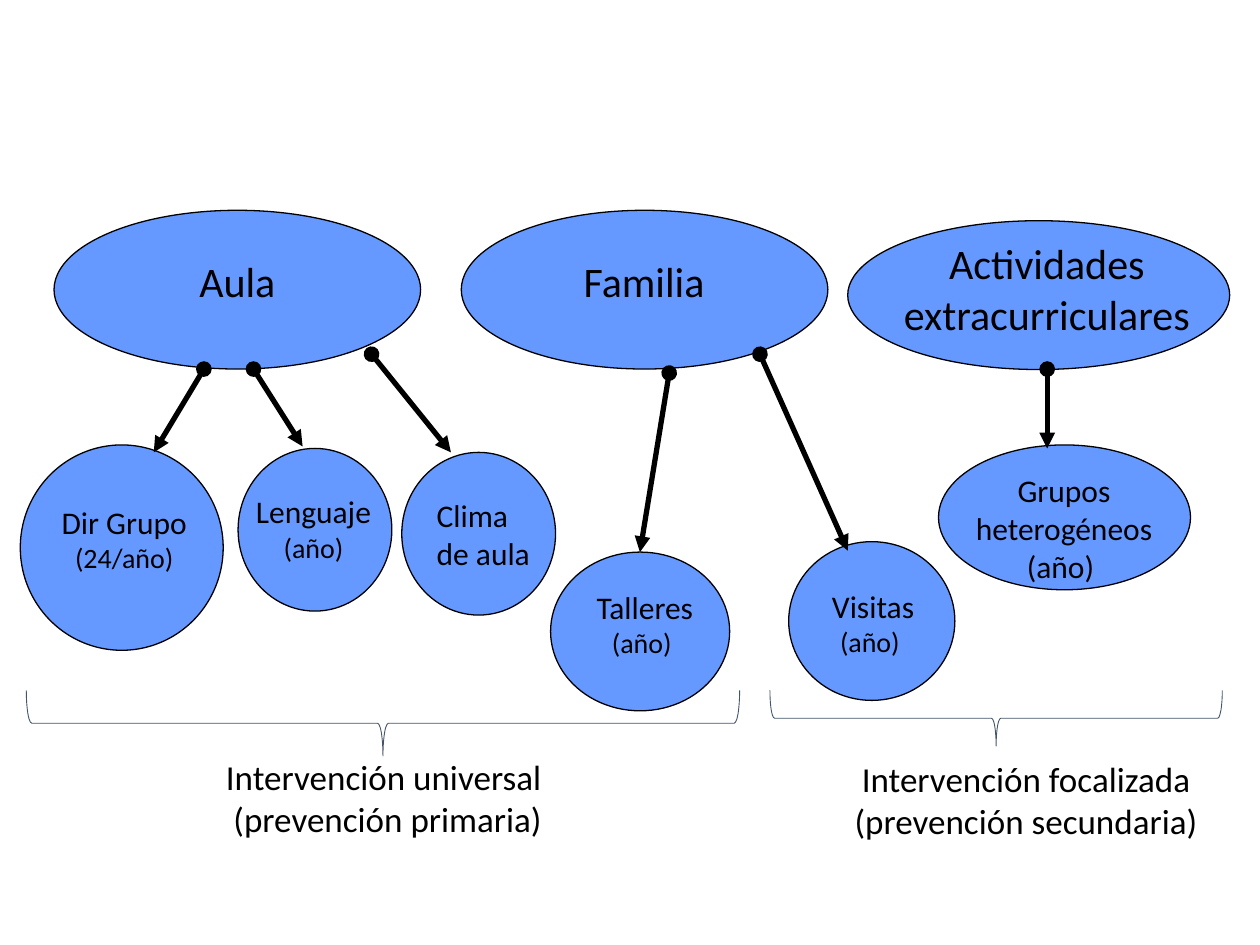
from lxml import etree
from pptx import Presentation
from pptx import util as u
from pptx.dml.color import RGBColor
from pptx.enum import shapes, text
from pptx.oxml.ns import qn

HUES = {"blue": "6699FF", "ink": "000000", "slate": "44546A"}
FONT = "Calibri"

# left, top, width, height in cm
OVALS = [
    (17.09, 4.45, 7.7, 3),         # extracurricular activities
    (9.3, 4.24, 7.39, 3.2),        # family
    (1.09, 4.24, 7.39, 3.2),       # classroom
    (11.1, 11.13, 3.61, 3.2),      # workshops
    (18.92, 8.97, 5.08, 2.92),     # mixed groups
    (15.9, 10.92, 3.35, 3.2),      # visits
    (4.8, 9.04, 3.1, 3.28),        # language
    (0.41, 8.97, 4.09, 4.14),      # group direction
]
CLIMATE = (8.1, 9.12, 3.1, 3.28)

# box, lines, size of the first line, size of the others, wrap
LABELS = [
    ((1.09, 5.03, 7.39, 1.3), ["Aula"], 24, 24, True),
    ((9.3, 5.03, 7.37, 1.3), ["Familia"], 24, 24, True),
    ((17.5, 4.67, 7.21, 2.31), ["Actividades extracurriculares"], 24, 24, True),
    ((0.51, 10.01, 3.99, 1.7), ["Dir Grupo", "(24/año)"], 18, 16, True),
    ((4.39, 9.8, 3.86, 1.7), ["Lenguaje", "(año)"], 18, 16, True),
    ((11.3, 11.73, 3.4, 1.7), ["Talleres", "(año) "], 18, 16, True),
    ((16, 11.71, 3.2, 1.7), ["Visitas", "(año) "], 18, 16, True),
    ((18.62, 9.37, 5.66, 2.57), ["Grupos", "heterogéneos", "(año) "], 18, 18, True),
    ((4.27, 15.11, 7.09, 1.96),
     ["Intervención universal ", "(prevención primaria)"], 20, 20, False),
    ((16.94, 15.14, 7.49, 1.96),
     ["Intervención focalizada", "(prevención secundaria)"], 20, 20, False),
]

# start x, y, end x, y in cm
ARROWS = [
    (4.11, 7.44, 3.1, 9.12),
    (5.11, 7.44, 6.1, 9),
    (7.49, 7.14, 9.09, 9.12),
    (13.49, 7.52, 12.9, 11.13),
    (15.32, 7.14, 17.09, 11.1),
    (21.11, 7.44, 21.11, 9.04),
]

# left, top, span, depth in cm, as seen on the slide
BRACES = [(0.53, 13.92, 14.38, 1.32), (15.52, 13.92, 9.12, 1.12)]


def cms(nums):
    return [u.Cm(n) for n in nums]


def hue(name):
    return RGBColor.from_string(HUES[name])


def outline(shape, name, width):
    shape.shadow.inherit = False
    shape.line.color.rgb = hue(name)
    shape.line.width = u.Pt(width)


def write(frame, lines, first, rest, align, wrap):
    frame.word_wrap = wrap
    frame.text = "\n".join(lines)
    for i, para in enumerate(frame.paragraphs):
        para.alignment = align
        for run in para.runs:
            run.font.name = FONT
            run.font.size = u.Pt(rest if i else first)
            run.font.color.rgb = hue("ink")


def oval(slide, box):
    shape = slide.shapes.add_shape(shapes.MSO_SHAPE.OVAL, *cms(box))
    shape.fill.solid()
    shape.fill.fore_color.rgb = hue("blue")
    outline(shape, "ink", 0.75)
    return shape


def label(slide, box, lines, first, rest, wrap):
    frame = slide.shapes.add_textbox(*cms(box)).text_frame
    write(frame, lines, first, rest, text.PP_ALIGN.CENTER, wrap)
    frame.auto_size = text.MSO_AUTO_SIZE.SHAPE_TO_FIT_TEXT


def arrow(slide, ends):
    """Thick line with a dot at its start and a triangle at its end."""
    line = slide.shapes.add_connector(shapes.MSO_CONNECTOR.STRAIGHT, *cms(ends))
    line.line.color.rgb = hue("ink")
    line.line.width = u.Pt(3)
    props = line.line._get_or_add_ln()
    for tag, kind in (("a:headEnd", "oval"), ("a:tailEnd", "triangle")):
        etree.SubElement(props, qn(tag), type=kind)
    etree.SubElement(line._element.spPr, qn("a:effectLst"))


def brace(slide, left, top, span, depth):
    """Right brace turned a quarter so that it points down."""
    shift = (span - depth) / 2
    box = cms((left + shift, top - shift, depth, span))
    shape = slide.shapes.add_shape(shapes.MSO_SHAPE.RIGHT_BRACE, *box)
    shape.rotation = 90
    shape.fill.background()
    outline(shape, "slate", 0.5)


def main():
    deck = Presentation()
    deck.slide_width, deck.slide_height = cms((25.4, 19.05))
    slide = deck.slides.add_slide(deck.slide_layouts[6])
    for box in OVALS:
        oval(slide, box)
    for item in LABELS:
        label(slide, *item)
    for ends in ARROWS:
        arrow(slide, ends)
    for item in BRACES:
        brace(slide, *item)
    frame = oval(slide, CLIMATE).text_frame
    write(frame, ["Clima", "de aula"], 18, 18, text.PP_ALIGN.LEFT, False)
    frame.vertical_anchor = text.MSO_ANCHOR.MIDDLE
    deck.save("out.pptx")


if __name__ == "__main__":
    main()
